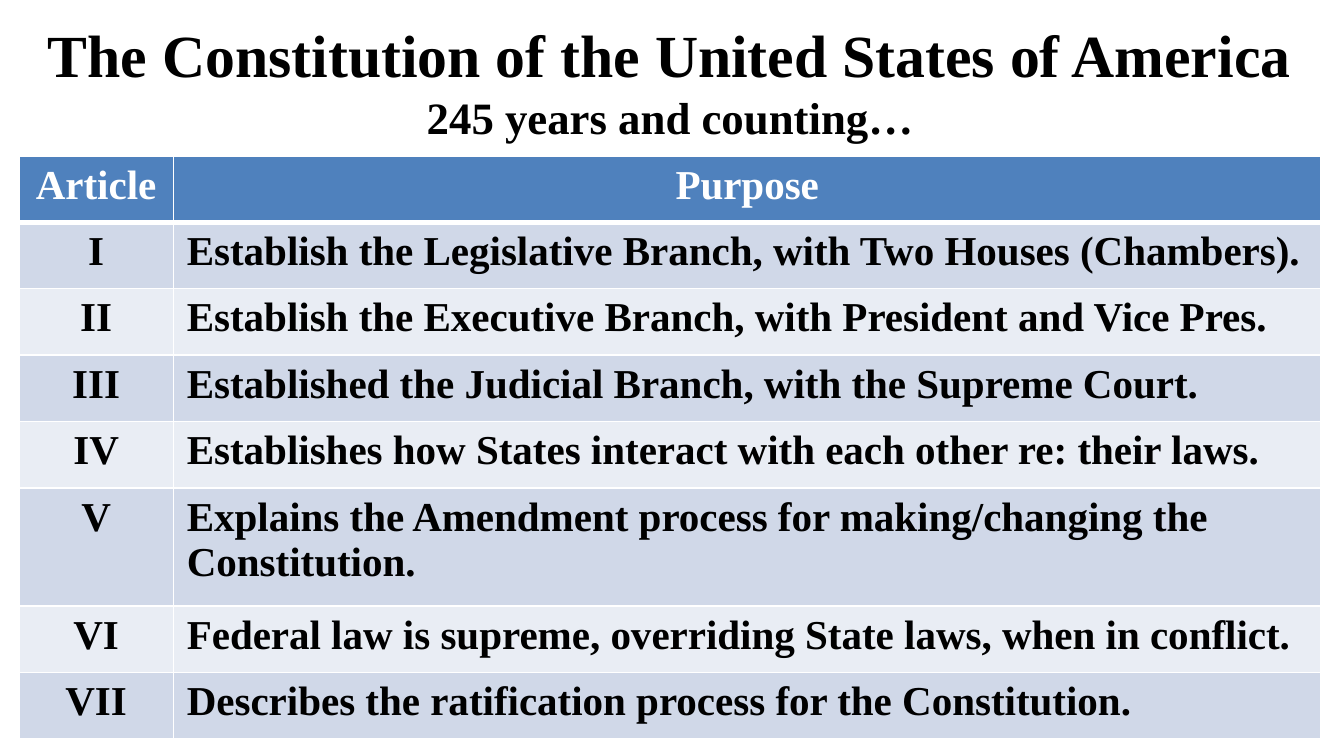
from lxml import etree
from pptx import Presentation
from pptx.dml.color import RGBColor as RGB
from pptx.enum.text import MSO_ANCHOR as Anchor, PP_ALIGN as Align
from pptx.oxml.ns import qn
from pptx.util import Inches, Pt

FONT = "Times New Roman"
HEX = {"text": "000000", "head": "4F81BD", "light": "FFFFFF",
       "odd": "D0D8E8", "even": "E9EDF4"}
ROWS = [
    ("Article", "Purpose"),
    ("I", "Establish the Legislative Branch, with Two Houses (Chambers)."),
    ("II", "Establish the Executive Branch, with President and Vice Pres."),
    ("III", "Established the Judicial Branch, with the Supreme Court."),
    ("IV", "Establishes how States interact with each other re: their laws."),
    ("V", "Explains the Amendment process for making/changing the Constitution."),
    ("VI", "Federal law is supreme, overriding State laws, when in conflict."),
    ("VII", "Describes the ratification process for the Constitution."),
]
TALL = 5
TALL_H = 0.88


def add_run(para, text, size, color="text"):
    run = para.add_run()
    run.text = text
    font = run.font
    font.name, font.size, font.bold = FONT, Pt(size), True
    font.color.rgb = RGB.from_string(HEX[color])


def add_title(slide, left, top, width, height):
    title = slide.shapes.title
    title.left, title.top = Inches(left), Inches(top)
    title.width, title.height = Inches(width), Inches(height)
    frame = title.text_frame
    frame.word_wrap = True
    frame.vertical_anchor = Anchor.MIDDLE
    para = frame.paragraphs[0]
    para.alignment = Align.CENTER
    add_run(para, "The Constitution of the United States of America", 32)
    para.add_line_break()
    # The break needs its own size, or the first line grows to the default
    etree.SubElement(para._p.find(qn("a:br")), qn("a:rPr"), sz="3200")
    add_run(para, "245 years and counting…", 24)


def add_rule(cell, points):
    """Draw a white line along the bottom of a cell."""
    line = etree.Element(qn("a:lnB"), w=str(Pt(points)))
    fill = etree.SubElement(line, qn("a:solidFill"))
    etree.SubElement(fill, qn("a:srgbClr"), val=HEX["light"])
    cell._tc.get_or_add_tcPr().insert(0, line)


def add_articles(slide, left, top, width, height):
    """Table of articles; the row whose text wraps is taller than the rest."""
    box = slide.shapes.add_table(len(ROWS), 2, Inches(left), Inches(top),
                                 Inches(width), Inches(height))
    table = box.table
    first = 1.15
    table.columns[0].width = Inches(first)
    table.columns[1].width = Inches(width - first)
    row_h = (height - TALL_H) / (len(ROWS) - 1)
    for r, texts in enumerate(ROWS):
        table.rows[r].height = Inches(TALL_H if r == TALL else row_h)
        fill = "head" if r == 0 else "odd" if r % 2 else "even"
        for c, text in enumerate(texts):
            cell = table.cell(r, c)
            cell.fill.solid()
            cell.fill.fore_color.rgb = RGB.from_string(HEX[fill])
            if r == 0:
                add_rule(cell, 3)
            para = cell.text_frame.paragraphs[0]
            para.alignment = Align.CENTER if r == 0 or c == 0 else Align.LEFT
            add_run(para, text, 22, "text" if r else "light")


def main():
    deck = Presentation()
    deck.slide_width = Inches(10)
    deck.slide_height = Inches(10 * 9 / 16)
    slide = deck.slides.add_slide(deck.slide_layouts[5])
    add_title(slide, 0.14, 0.13, 9.69, 0.94)
    add_articles(slide, 0.14, 1.16, 9.69, 4.34)
    deck.save("out.pptx")


if __name__ == "__main__":
    main()
